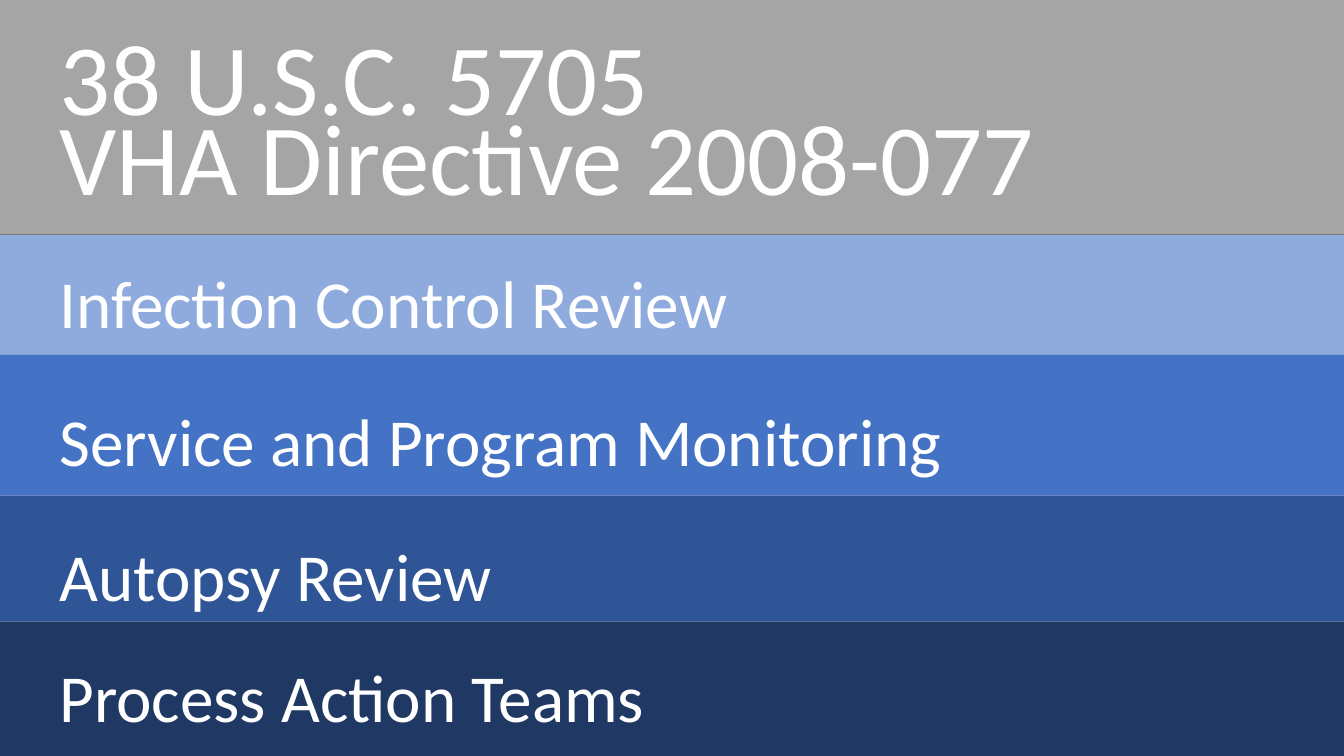
from pptx import Presentation
from pptx.dml.color import RGBColor
from pptx.enum.shapes import MSO_SHAPE
from pptx.enum.text import MSO_ANCHOR, MSO_AUTO_SIZE, PP_ALIGN
from pptx.util import Pt

RECT = MSO_SHAPE.RECTANGLE
MIDDLE = MSO_ANCHOR.MIDDLE
BOTTOM = MSO_ANCHOR.BOTTOM
LEFT = PP_ALIGN.LEFT
FIXED = MSO_AUTO_SIZE.NONE

WHITE = RGBColor(0xFF, 0xFF, 0xFF)
GREY = RGBColor(0xA5, 0xA5, 0xA5)
EDGE = RGBColor(0x7A, 0x7A, 0x7A)
PALE = RGBColor(0x8F, 0xAA, 0xDC)
BLUE = RGBColor(0x44, 0x72, 0xC4)
DEEP = RGBColor(0x2F, 0x55, 0x97)
NAVY = RGBColor(0x20, 0x38, 0x64)

FONT = "Calibri"
WIDE, HIGH = 960, 540
INDENT = 42.5
BLEED = 6
HEAD = 168

BANDS = [
    ("Infection Control Review", PALE, 85.5, 10),
    ("Service and Program Monitoring", BLUE, 100.5, 20),
    ("Autopsy Review", DEEP, 90, 23),
    ("Process Action Teams", NAVY, 96, 10),
]


def paint(shape, color):
    shape.fill.solid()
    shape.fill.fore_color.rgb = color


def write(shape, text, size, anchor, left, top, bottom):
    frame = shape.text_frame
    frame.text = text
    frame.word_wrap = True
    frame.auto_size = FIXED
    frame.vertical_anchor = anchor
    frame.margin_left = Pt(left)
    frame.margin_top = Pt(top)
    frame.margin_bottom = Pt(bottom)
    for para in frame.paragraphs:
        para.alignment = LEFT
        for run in para.runs:
            run.font.name = FONT
            run.font.size = Pt(size)
            run.font.color.rgb = WHITE


def add_title(slide, text):
    title = slide.shapes.title
    title.left = title.top = Pt(-BLEED)
    title.width = Pt(WIDE + 2 * BLEED)
    title.height = Pt(HEAD + BLEED)
    paint(title, GREY)
    title.line.color.rgb = EDGE
    title.line.width = Pt(1)
    write(title, text, 72, BOTTOM, INDENT + BLEED, 0, 14)
    for para in title.text_frame.paragraphs:
        para.line_spacing = Pt(57)
        para.space_before = Pt(0)


def add_band(slide, text, color, top, height, inset):
    band = slide.shapes.add_shape(RECT, Pt(0), Pt(top), Pt(WIDE), Pt(height))
    band.shadow.inherit = False
    band.line.fill.background()
    paint(band, color)
    write(band, text, 48, MIDDLE, INDENT, inset, 0)


def main():
    deck = Presentation()
    deck.slide_width = Pt(WIDE)
    deck.slide_height = Pt(HIGH)
    slide = deck.slides.add_slide(deck.slide_layouts[5])
    add_title(slide, "38 U.S.C. 5705\nVHA Directive 2008-077")
    top = HEAD
    for text, color, height, inset in BANDS:
        add_band(slide, text, color, top, height, inset)
        top += height
    deck.save("out.pptx")


if __name__ == "__main__":
    main()
